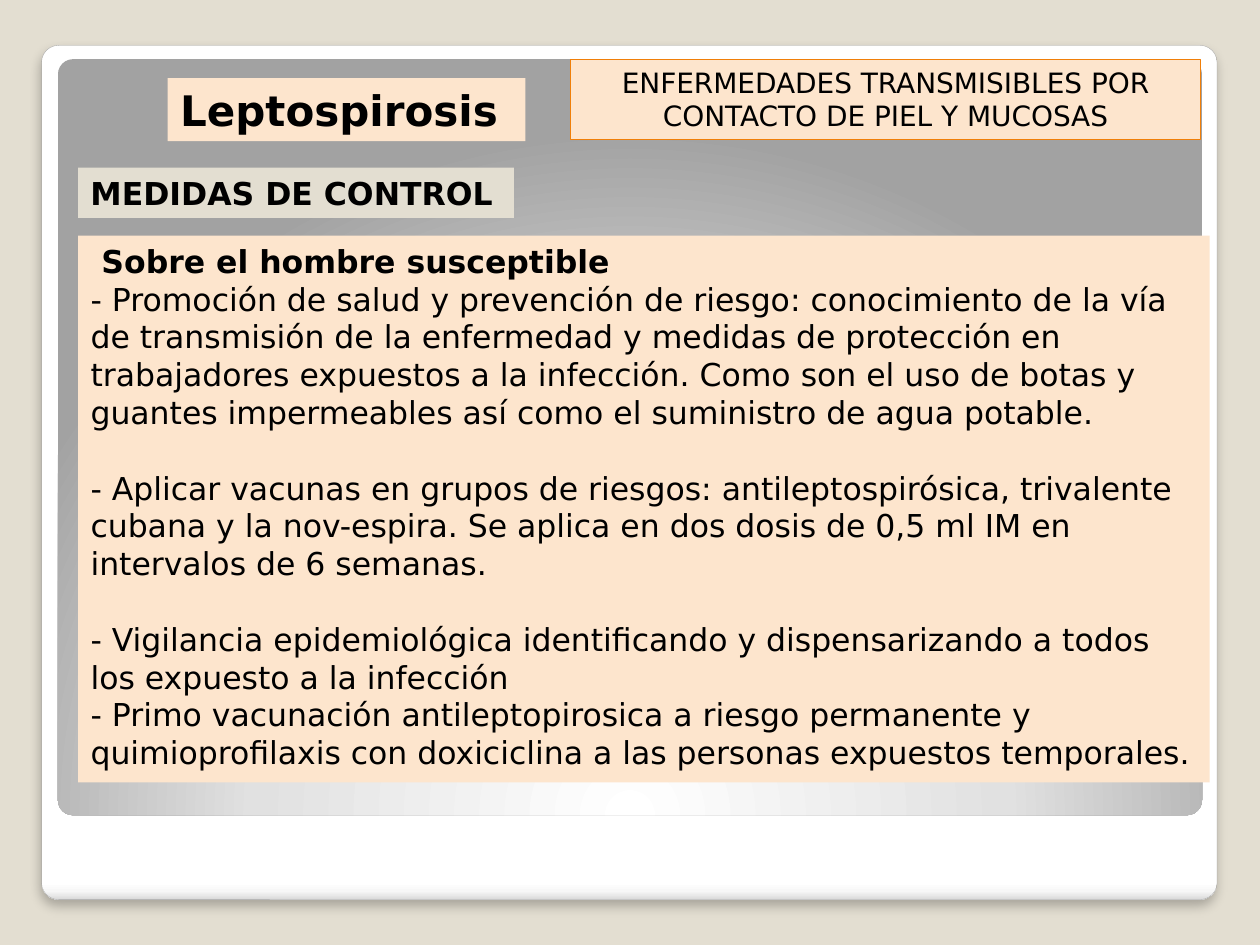
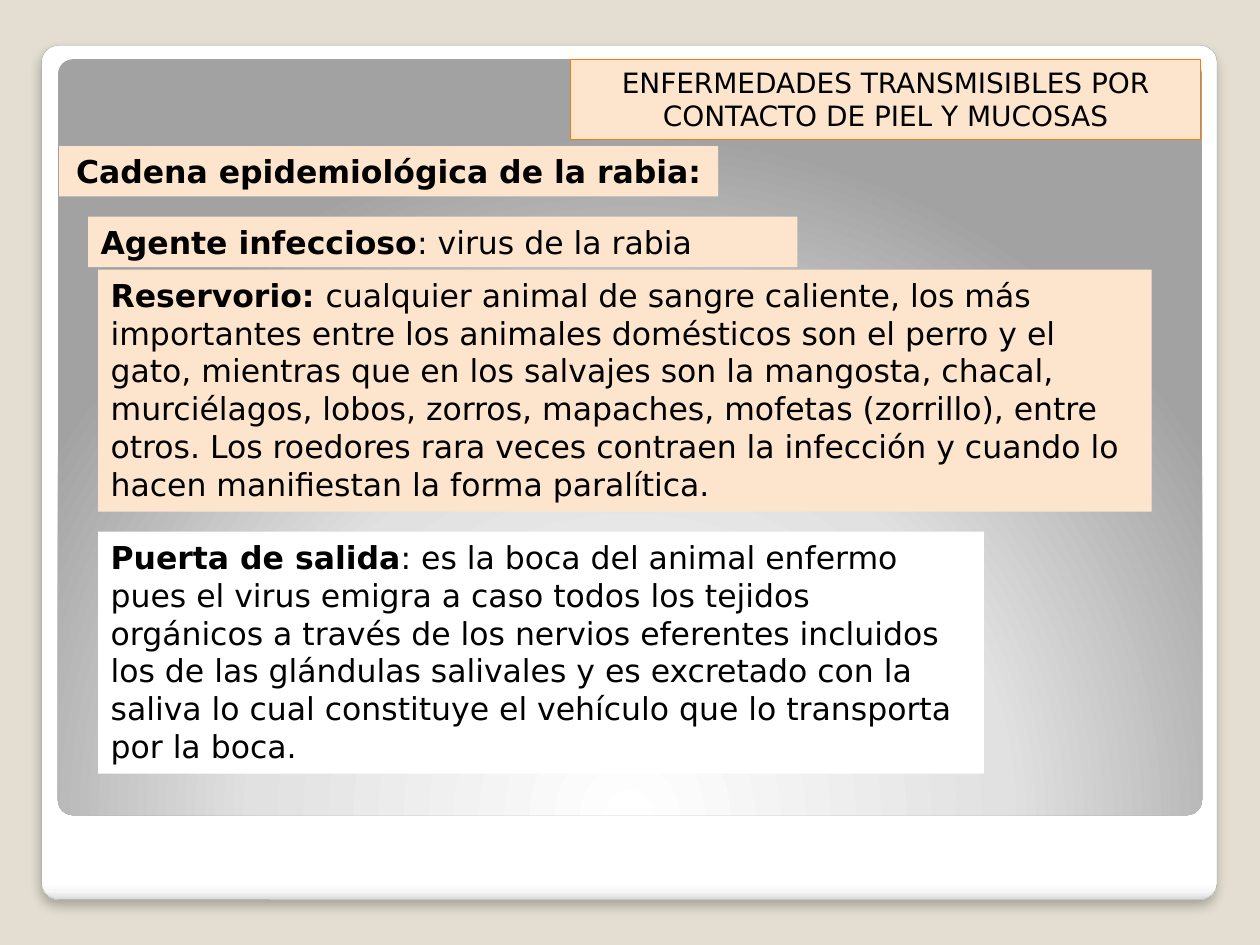
from pptx import Presentation
from pptx.util import Inches, Pt
from pptx.dml.color import RGBColor
from pptx.enum.shapes import MSO_SHAPE as Kind
from pptx.enum.text import PP_ALIGN as Align, MSO_ANCHOR as Anchor, MSO_AUTO_SIZE as Auto
from pptx.oxml import parse_xml
from pptx.oxml.ns import qn, nsdecls

FONT = "DejaVu Sans"
SAND, PEACH, WHITE, BLACK = "E3DED1", "FDE5CD", "FFFFFF", "000000"
ORANGE, GREY = "F07F09", "A4A4A4"
WIDE, HIGH = 10, 7.5
GAP = 21.6

HEAD = dict(at=(4.53, 0.47, 5, 0.64), size=16, line=ORANGE, mid=True,
            text=[[("ENFERMEDADES TRANSMISIBLES POR CONTACTO DE PIEL Y MUCOSAS", False)]])

SLIDES = [
    dict(
        title=dict(at=(1.33, 0.62, 2.84, 0.5), size=24,
                   text=[[("Leptospirosis", True)]]),
        parts=[
            dict(at=(0.62, 1.87, 8.98, 4.34), gaps=(2, 3), text=[
                [(" Sobre el hombre susceptible", True)],
                [("- Promoción de salud y prevención de riesgo: conocimiento de la vía "
                  "de transmisión de la enfermedad y medidas de protección en "
                  "trabajadores expuestos a la infección. Como son el uso de botas y "
                  "guantes impermeables así como el suministro de agua potable.", False)],
                [("- Aplicar vacunas en grupos de riesgos: antileptospirósica, trivalente "
                  "cubana y la nov-espira. Se aplica en dos dosis de 0,5 ml IM en "
                  "intervalos de 6 semanas.", False)],
                [("- Vigilancia epidemiológica identificando y dispensarizando a todos "
                  "los expuesto a la infección", False)],
                [("- Primo vacunación antileptopirosica a riesgo permanente y "
                  "quimioprofilaxis con doxiciclina a las personas expuestos "
                  "temporales.", False)]]),
            dict(at=(0.62, 1.33, 3.46, 0.4), fill=SAND,
                 text=[[("MEDIDAS DE CONTROL", True)]]),
        ]),
    dict(
        title=dict(at=(0.47, 1.16, 5.23, 0.4), mid=True,
                   text=[[("Cadena epidemiológica de la rabia: ", True)]]),
        parts=[
            dict(at=(0.7, 1.72, 5.63, 0.4),
                 text=[[("Agente infeccioso", True), (": virus de la rabia", False)]]),
            dict(at=(0.78, 2.14, 8.36, 1.92), text=[[
                ("Reservorio: ", True),
                ("cualquier animal de sangre caliente, los más importantes entre los "
                 "animales domésticos son el perro y el gato, mientras que en los "
                 "salvajes son la mangosta, chacal, murciélagos, lobos, zorros, "
                 "mapaches, mofetas (zorrillo), entre otros. Los roedores rara veces "
                 "contraen la infección y cuando lo hacen manifiestan la forma "
                 "paralítica.", False)]]),
            dict(at=(0.78, 4.22, 7.03, 1.92), fill=WHITE, text=[[
                ("Puerta de salida", True),
                (": es la boca del animal enfermo pues el virus emigra a caso todos "
                 "los tejidos orgánicos a través de los nervios eferentes incluidos "
                 "los de las glándulas salivales y es excretado con la saliva lo cual "
                 "constituye el vehículo que lo transporta por la boca.", False)]]),
        ]),
]

CARD = dict(at=(0.33, 0.36, 9.33, 6.78), line=GREY, shade=True,
            stops=[(0, WHITE), (98, WHITE), (99, "F7F7F7"), (100, "DADADA")],
            way='<a:lin ang="5400000" scaled="0"/>')
PANEL = dict(at=(0.46, 0.47, 9.08, 6),
             stops=[(0, WHITE), (55, "E1E1E1"), (100, "A2A2A2")],
             way='<a:path path="circle"><a:fillToRect l="50000" t="175000" '
                 'r="50000" b="-75000"/></a:path>')


def color(code):
    return RGBColor.from_string(code)


def paint(fill, code):
    fill.solid()
    fill.fore_color.rgb = color(code)


def back(slide, at, stops, way, line=None, shade=False):
    shape = slide.shapes.add_shape(Kind.ROUNDED_RECTANGLE, *map(Inches, at))
    shape.adjustments[0] = 0.02
    shape.shadow.inherit = False
    shape.fill.background()
    if line:
        shape.line.color.rgb = color(line)
        shape.line.width = Pt(0.16)
    else:
        shape.line.fill.background()
    marks = "".join(f'<a:gs pos="{pos * 1000}"><a:srgbClr val="{code}"/></a:gs>'
                    for pos, code in stops)
    props = shape.element.spPr
    props.replace(props.find(qn("a:noFill")), parse_xml(
        f'<a:gradFill {nsdecls("a")} rotWithShape="1"><a:gsLst>{marks}</a:gsLst>{way}</a:gradFill>'))
    if shade:
        props.find(qn("a:effectLst")).append(parse_xml(
            f'<a:outerShdw {nsdecls("a")} blurRad="{Pt(6)}" dist="{Pt(4)}" dir="5400000" '
            f'algn="t" rotWithShape="0"><a:srgbClr val="{BLACK}">'
            '<a:alpha val="25000"/></a:srgbClr></a:outerShdw>'))


def write(box, at, text, size=18, fill=PEACH, line=None, mid=False, gaps=()):
    box.left, box.top, box.width, box.height = map(Inches, at)
    paint(box.fill, fill)
    if line:
        box.line.color.rgb = color(line)
        box.line.width = Pt(0.75)
    frame = box.text_frame
    frame.word_wrap = True
    frame.auto_size = Auto.NONE
    frame.vertical_anchor = Anchor.TOP
    for i, runs in enumerate(text):
        para = frame.add_paragraph() if i else frame.paragraphs[0]
        para.alignment = Align.CENTER if mid else Align.LEFT
        para.space_before = Pt(GAP if i in gaps else 0)
        for words, bold in runs:
            run = para.add_run()
            run.text = words
            font = run.font
            font.name, font.size, font.bold = FONT, Pt(size), bold
            font.color.rgb = color(BLACK)


def build(deck, data):
    slide = deck.slides.add_slide(deck.slide_layouts[5])
    paint(slide.background.fill, SAND)
    for part in (CARD, PANEL):
        back(slide, **part)
    for part in data["parts"] + [HEAD]:
        write(slide.shapes.add_textbox(0, 0, 0, 0), **part)
    title = slide.shapes.title
    write(title, **data["title"])
    title.element.getparent().append(title.element)


def main():
    deck = Presentation()
    deck.slide_width, deck.slide_height = Inches(WIDE), Inches(HIGH)
    for data in SLIDES:
        build(deck, data)
    deck.save("out.pptx")


if __name__ == "__main__":
    main()
